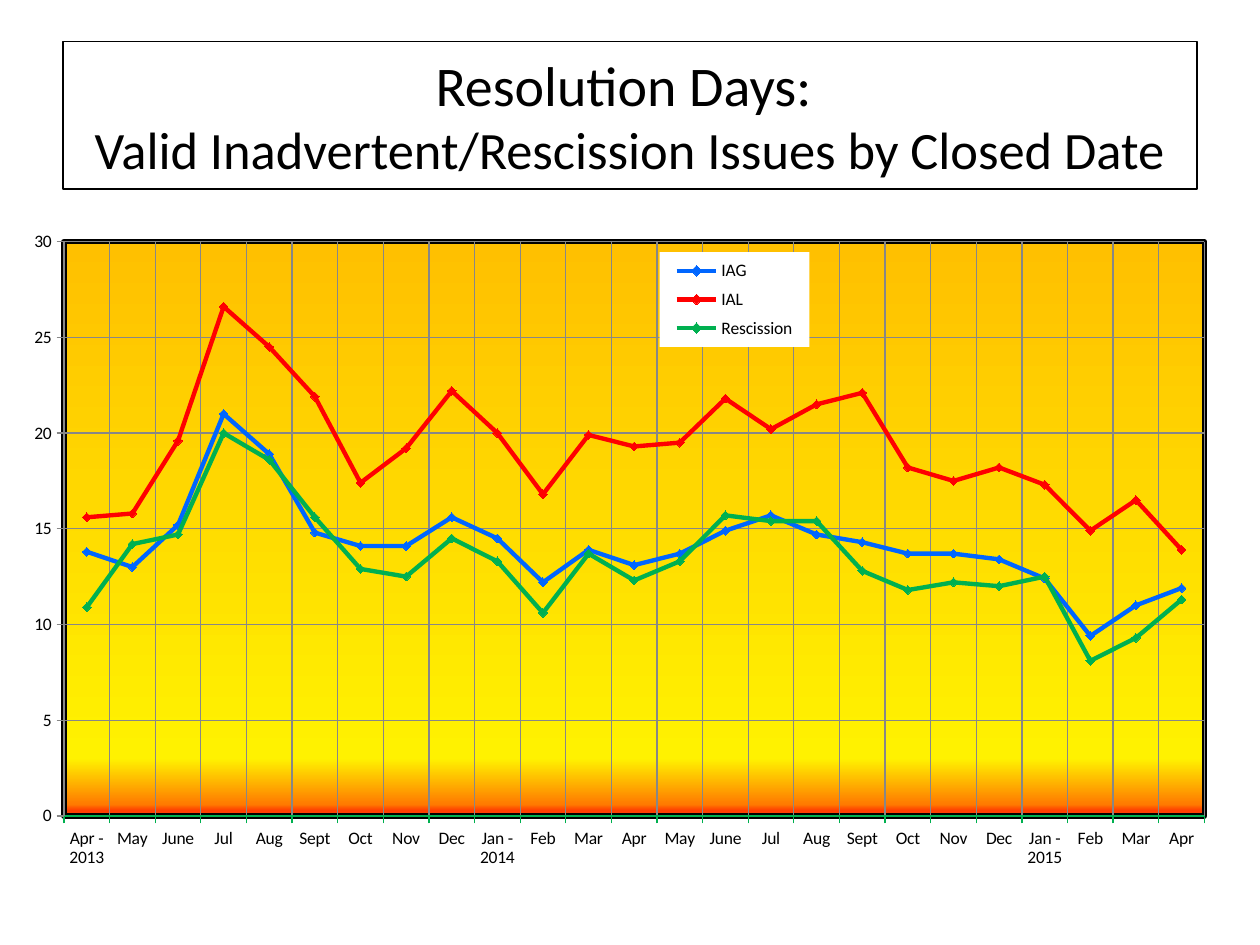
from dataclasses import dataclass

from lxml import etree
from pptx import Presentation
from pptx.chart.data import CategoryChartData
from pptx.dml.color import RGBColor
from pptx.enum.chart import XL_CHART_TYPE, XL_LEGEND_POSITION, XL_MARKER_STYLE, XL_TICK_MARK
from pptx.enum.text import MSO_ANCHOR, PP_ALIGN
from pptx.oxml import parse_xml
from pptx.oxml.ns import nsdecls, qn
from pptx.util import Inches, Pt

LINE_MARKERS = XL_CHART_TYPE.LINE_MARKERS
LEGEND_RIGHT = XL_LEGEND_POSITION.RIGHT
DIAMOND = XL_MARKER_STYLE.DIAMOND
TICK_OUTSIDE = XL_TICK_MARK.OUTSIDE
MIDDLE = MSO_ANCHOR.MIDDLE
CENTER = PP_ALIGN.CENTER


@dataclass(frozen=True)
class Theme:
    font: str = "Calibri"
    text: str = "000000"
    background: str = "FFFFFF"
    grid: str = "878787"
    category_axis: str = "00B050"
    title_size: float = 32
    subtitle_size: float = 30
    chart_size: float = 10
    thin_line: float = 0.75
    plot_border: float = 3
    series_line: float = 2.5
    marker_size: int = 5
    gradient: tuple = ((0, "FFC000"), (90, "FFF200"), (98, "FF7A00"), (99, "FF3F00"))


TITLE_LINES = ("Resolution Days: ", "Valid Inadvertent/Rescission Issues by Closed Date")
MONTHS = (
    "Apr - 2013", "May", "June", "Jul", "Aug", "Sept", "Oct", "Nov", "Dec",
    "Jan - 2014", "Feb", "Mar", "Apr", "May", "June", "Jul", "Aug", "Sept",
    "Oct", "Nov", "Dec", "Jan - 2015", "Feb", "Mar", "Apr",
)
RESOLUTION_DAYS = (
    ("IAG", "0066FF", (
        13.8, 13, 15.2, 21, 18.9, 14.8, 14.1, 14.1, 15.6, 14.5, 12.2, 13.9, 13.1,
        13.7, 14.9, 15.7, 14.7, 14.3, 13.7, 13.7, 13.4, 12.4, 9.4, 11, 11.9)),
    ("IAL", "FF0000", (
        15.6, 15.8, 19.6, 26.6, 24.5, 21.9, 17.4, 19.2, 22.2, 20, 16.8, 19.9, 19.3,
        19.5, 21.8, 20.2, 21.5, 22.1, 18.2, 17.5, 18.2, 17.3, 14.9, 16.5, 13.9)),
    ("Rescission", "00B050", (
        10.9, 14.2, 14.7, 20, 18.6, 15.6, 12.9, 12.5, 14.5, 13.3, 10.6, 13.7, 12.3,
        13.3, 15.7, 15.4, 15.4, 12.8, 11.8, 12.2, 12, 12.5, 8.1, 9.3, 11.3)),
)


def set_attributes(target, values):
    for name, value in values.items():
        setattr(target, name, value)


def manual_layout(left, top, width, height, inner=False):
    layout = etree.Element(qn("c:layout"))
    manual = etree.SubElement(layout, qn("c:manualLayout"))
    values = {"layoutTarget": "inner"} if inner else {}
    values |= {"xMode": "edge", "yMode": "edge", "x": left, "y": top, "w": width, "h": height}
    for name, value in values.items():
        etree.SubElement(manual, qn(f"c:{name}")).set("val", str(value))
    return layout


class SlideBuilder:
    def __init__(self, slide, theme):
        self.slide = slide
        self.theme = theme

    def format_font(self, font, size):
        set_attributes(font, {"name": self.theme.font, "size": Pt(size), "bold": False})
        font.color.rgb = RGBColor.from_string(self.theme.text)

    def format_line(self, line, color, width):
        line.color.rgb = RGBColor.from_string(color)
        line.width = Pt(width)

    def add_title(self, lines, left, top, width, height):
        title = self.slide.shapes.title
        set_attributes(title, {"left": left, "top": top, "width": width, "height": height})
        self.format_line(title.line, self.theme.text, self.theme.thin_line)
        set_attributes(title.text_frame, {"word_wrap": True, "vertical_anchor": MIDDLE})
        paragraph = title.text_frame.paragraphs[0]
        paragraph.alignment = CENTER
        sizes = (self.theme.title_size, self.theme.subtitle_size)
        for index, (text, size) in enumerate(zip(lines, sizes)):
            if index:
                paragraph.add_line_break()
            run = paragraph.add_run()
            run.text = text
            self.format_font(run.font, size)

    def add_line_chart(self, categories, series_rows, left, top, width, height):
        data = CategoryChartData()
        data.categories = categories
        for name, _, values in series_rows:
            data.add_series(name, values)
        chart = self.slide.shapes.add_chart(LINE_MARKERS, left, top, width, height, data).chart
        set_attributes(chart, {"has_title": False, "has_legend": True})
        self.format_font(chart.font, self.theme.chart_size)
        chart.plots[0].vary_by_categories = False
        for series, (_, color, _) in zip(chart.plots[0].series, series_rows):
            self.format_series(series, color)
        self.format_axis(chart.category_axis, self.theme.category_axis)
        self.format_axis(chart.value_axis, self.theme.grid)
        set_attributes(chart.value_axis, {"minimum_scale": 0, "maximum_scale": 30, "major_unit": 5})
        return chart

    def format_series(self, series, color):
        series.smooth = False
        self.format_line(series.format.line, color, self.theme.series_line)
        marker = series.marker
        set_attributes(marker, {"style": DIAMOND, "size": self.theme.marker_size})
        marker.format.fill.solid()
        marker.format.fill.fore_color.rgb = RGBColor.from_string(color)
        self.format_line(marker.format.line, color, self.theme.thin_line)

    def format_axis(self, axis, color):
        set_attributes(axis, {"has_major_gridlines": True, "major_tick_mark": TICK_OUTSIDE})
        self.format_line(axis.format.line, color, self.theme.thin_line)
        gridline = axis.major_gridlines.format.line
        self.format_line(gridline, self.theme.grid, self.theme.thin_line)

    def format_plot_area(self, chart, *bounds):
        plot_area = chart.element.find(".//" + qn("c:plotArea"))
        for layout in plot_area.findall(qn("c:layout")):
            plot_area.remove(layout)
        plot_area.insert(0, manual_layout(*bounds, inner=True))
        stops = "".join(
            f'<a:gs pos="{position * 1000}"><a:srgbClr val="{color}"/></a:gs>'
            for position, color in self.theme.gradient
        )
        plot_area.append(parse_xml(
            f'<c:spPr {nsdecls("c", "a")}><a:gradFill><a:gsLst>{stops}</a:gsLst>'
            f'<a:lin ang="5400000" scaled="0"/></a:gradFill>'
            f'<a:ln w="{Pt(self.theme.plot_border)}"><a:solidFill>'
            f'<a:srgbClr val="{self.theme.text}"/></a:solidFill></a:ln></c:spPr>'
        ))

    def format_legend(self, chart, *bounds):
        legend = chart.legend
        set_attributes(legend, {"position": LEGEND_RIGHT, "include_in_layout": False})
        self.format_font(legend.font, self.theme.chart_size)
        element = chart.element.find(".//" + qn("c:legend"))
        for layout in element.findall(qn("c:layout")):
            element.remove(layout)
        overlay = element.find(qn("c:overlay"))
        overlay.addprevious(manual_layout(*bounds))
        overlay.addnext(parse_xml(
            f'<c:spPr {nsdecls("c", "a")}><a:solidFill>'
            f'<a:srgbClr val="{self.theme.background}"/></a:solidFill></c:spPr>'
        ))


def main():
    presentation = Presentation()
    presentation.slide_width = Inches(10)
    presentation.slide_height = Inches(7.5)
    slide = presentation.slides.add_slide(presentation.slide_layouts[5])
    builder = SlideBuilder(slide, Theme())
    builder.add_title(TITLE_LINES, Inches(0.5), Inches(0.33), Inches(9), Inches(1.17))
    chart = builder.add_line_chart(
        MONTHS, RESOLUTION_DAYS, Inches(0.17), Inches(1.67), Inches(9.65), Inches(5.5)
    )
    builder.format_plot_area(chart, 0.035, 0.045, 0.938, 0.829)
    builder.format_legend(chart, 0.525, 0.06, 0.123, 0.137)
    presentation.save("out.pptx")


if __name__ == "__main__":
    main()
